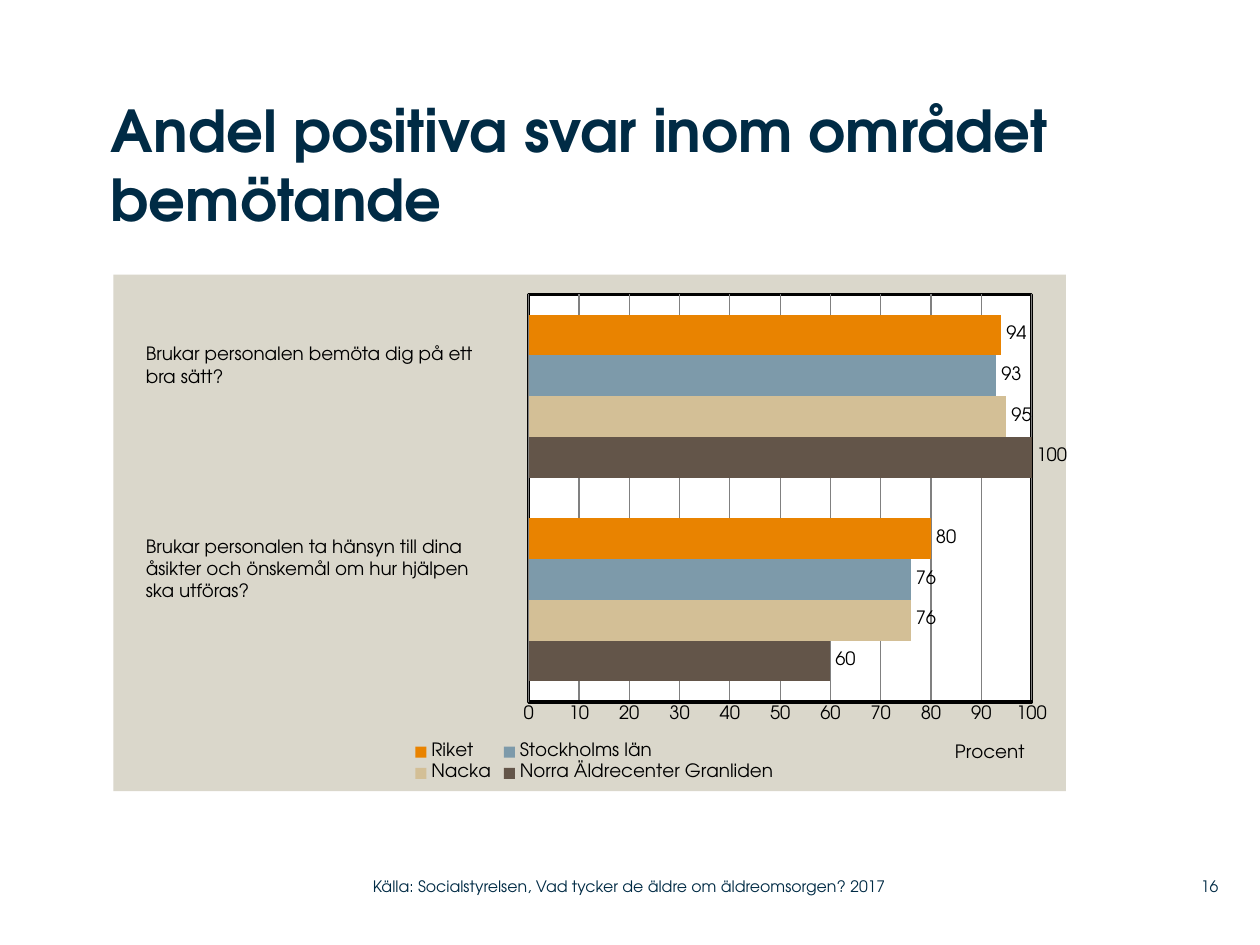
"""Build a slide with a bar chart of positive answers about how staff treat people."""
from dataclasses import dataclass

import lxml.etree
import pptx
import pptx.chart.axis
import pptx.chart.chart
import pptx.chart.data
import pptx.dml.color
import pptx.enum.chart
import pptx.enum.text
import pptx.oxml
import pptx.oxml.ns
import pptx.slide
import pptx.text.text
import pptx.util
from pptx.util import Inches

FONT = "TeX Gyre Adventor"
COLORS = {
    "navy": "002B45", "black": "000000", "panel": "DAD7CB", "white": "FFFFFF",
    "grid": "808080", "brown": "635549", "sand": "D3BF96", "blue": "7D9AAA",
    "orange": "E98300",
}


@dataclass
class Series:
    name: str
    values: tuple[int, int]
    color: str


@dataclass
class Label:
    lines: tuple[str, ...]
    left: float
    top: float
    width: float
    height: float
    size: float = 10.5
    color: str = "black"
    inset: float | None = None
    centered: bool = False
    align_right: bool = False


SERIES = (
    Series("Norra Äldrecenter Granliden", (60, 100), "brown"),
    Series("Nacka", (76, 95), "sand"),
    Series("Stockholms län", (76, 93), "blue"),
    Series("Riket", (80, 94), "orange"),
)
QUESTIONS = (
    Label(("Brukar personalen bemöta dig på ett", "bra sätt?"), 1.06, 2.67, 2.97, 0.45),
    Label(("Brukar personalen ta hänsyn till dina", "åsikter och önskemål om hur hjälpen",
           "ska utföras?"), 1.06, 4.2, 2.99, 0.63),
)
FOOTERS = (
    Label(("16",), 9.2, 6.89, 0.47, 0.29, 9, "navy", 0, True, True),
    Label(("Källa: Socialstyrelsen, Vad tycker de äldre om äldreomsorgen? 2017",),
          2.96, 6.89, 4.43, 0.29, 9, "navy", 0, True),
)


def rgb(name: str) -> pptx.dml.color.RGBColor:
    """Return the named colour."""
    return pptx.dml.color.RGBColor.from_string(COLORS[name])


def style_font(font: pptx.text.text.Font, size: float, color: str, bold: bool = False) -> None:
    """Set the face, size, colour and weight of a font."""
    font.name = FONT
    font.size = pptx.util.Pt(size)
    font.bold = bold
    font.color.rgb = rgb(color)


def set_insets(frame: pptx.text.text.TextFrame, inset: float) -> None:
    """Give a text frame the same margin on every side."""
    frame.margin_left = frame.margin_right = Inches(inset)
    frame.margin_top = frame.margin_bottom = Inches(inset)


def add_label(page: pptx.slide.Slide, label: Label) -> None:
    """Add a text box with one paragraph per line."""
    box = page.shapes.add_textbox(Inches(label.left), Inches(label.top),
                                  Inches(label.width), Inches(label.height))
    frame = box.text_frame
    frame.word_wrap = True
    if label.inset is not None:
        set_insets(frame, label.inset)
    if label.centered:
        frame.vertical_anchor = pptx.enum.text.MSO_ANCHOR.MIDDLE
    else:
        frame.auto_size = pptx.enum.text.MSO_AUTO_SIZE.SHAPE_TO_FIT_TEXT
    for index, line in enumerate(label.lines):
        para = frame.add_paragraph() if index else frame.paragraphs[0]
        if label.align_right:
            para.alignment = pptx.enum.text.PP_ALIGN.RIGHT
        span = para.add_run()
        span.text = line
        style_font(span.font, label.size, label.color)


def set_layout(parent: lxml.etree._Element, index: int, **fractions: float) -> None:
    """Place a chart part by fractions of the chart size."""
    for old in parent.findall(pptx.oxml.ns.qn("c:layout")):
        parent.remove(old)
    target = '<c:layoutTarget val="inner"/>' if parent.tag.endswith("plotArea") else ""
    modes = "".join(f'<c:{key}Mode val="edge"/>' for key in "xy")
    sizes = "".join(f'<c:{key} val="{value}"/>' for key, value in fractions.items())
    parent.insert(index, pptx.oxml.parse_xml(
        f'<c:layout {pptx.oxml.ns.nsdecls("c")}><c:manualLayout>'
        f"{target}{modes}{sizes}</c:manualLayout></c:layout>"))


def area_format(fill: str, line: str) -> lxml.etree._Element:
    """Return the fill and outline of a chart area."""
    return pptx.oxml.parse_xml(
        f'<c:spPr {pptx.oxml.ns.nsdecls("c", "a")}><a:solidFill>'
        f'<a:srgbClr val="{COLORS[fill]}"/></a:solidFill>{line}</c:spPr>')


def format_value_axis(axis: pptx.chart.axis.ValueAxis) -> None:
    """Set the percent scale, grid and title."""
    axis.minimum_scale, axis.maximum_scale, axis.major_unit = 0, 100, 10
    axis.major_tick_mark = pptx.enum.chart.XL_TICK_MARK.NONE
    axis.has_major_gridlines = True
    axis.major_gridlines.format.line.color.rgb = rgb("grid")
    axis.major_gridlines.format.line.width = pptx.util.Pt(0.75)
    axis.format.line.color.rgb = rgb("black")
    axis.format.line.width = pptx.util.Pt(2)
    style_font(axis.tick_labels.font, 10.5, "black")
    axis.has_title = True
    span = axis.axis_title.text_frame.paragraphs[0].add_run()
    span.text = "Procent"
    style_font(span.font, 10.5, "black")
    set_layout(axis.axis_title._element, 1, x=0.88, y=0.9)


def format_areas(chart: pptx.chart.chart.Chart) -> None:
    """Fill the panel and the framed plot, and place plot and legend."""
    space = chart._chartSpace
    body = space.find(pptx.oxml.ns.qn("c:chart"))
    body.addnext(area_format("panel", "<a:ln><a:noFill/></a:ln>"))
    plot_area = body.find(pptx.oxml.ns.qn("c:plotArea"))
    set_layout(plot_area, 0, x=0.436, y=0.038, w=0.528, h=0.789)
    plot_area.append(area_format(
        "white", f'<a:ln w="25400"><a:solidFill><a:srgbClr val="{COLORS["black"]}"/>'
        "</a:solidFill></a:ln>"))
    set_layout(chart.legend._element, 1, x=0.31, y=0.9, w=0.39, h=0.09)


def add_answer_chart(page: pptx.slide.Slide) -> None:
    """Add the clustered bars of positive answers."""
    data = pptx.chart.data.CategoryChartData()
    data.categories = ["1", "2"]
    for entry in SERIES:
        data.add_series(entry.name, entry.values)
    chart = page.shapes.add_chart(
        pptx.enum.chart.XL_CHART_TYPE.BAR_CLUSTERED,
        Inches(0.9), Inches(2.18), Inches(7.57), Inches(4.1), data).chart
    style_font(chart.font, 10.5, "black")
    chart.has_title = False
    chart.has_legend = True
    chart.legend.position = pptx.enum.chart.XL_LEGEND_POSITION.BOTTOM
    chart.legend.include_in_layout = False
    style_font(chart.legend.font, 10.5, "black")
    chart.category_axis.visible = False
    format_value_axis(chart.value_axis)
    plot = chart.plots[0]
    plot.gap_width, plot.overlap = 100, 0
    plot.vary_by_categories = False
    for entry, bars in zip(SERIES, plot.series):
        bars.format.fill.solid()
        bars.format.fill.fore_color.rgb = rgb(entry.color)
        labels = bars.data_labels
        labels.show_value = True
        labels.position = pptx.enum.chart.XL_LABEL_POSITION.OUTSIDE_END
        style_font(labels.font, 10.5, "black")
    format_areas(chart)


def set_title(page: pptx.slide.Slide) -> None:
    """Place and fill the title placeholder."""
    title = page.shapes.title
    title.left, title.top = Inches(0.88), Inches(0.75)
    title.width, title.height = Inches(7.6), Inches(1.42)
    frame = title.text_frame
    set_insets(frame, 0)
    frame.word_wrap = True
    frame.auto_size = pptx.enum.text.MSO_AUTO_SIZE.NONE
    frame.vertical_anchor = pptx.enum.text.MSO_ANCHOR.TOP
    para = frame.paragraphs[0]
    para.alignment = pptx.enum.text.PP_ALIGN.LEFT
    span = para.add_run()
    span.text = "Andel positiva svar inom området bemötande"
    style_font(span.font, 33, "navy", True)


def main() -> None:
    """Build and save the deck."""
    deck = pptx.Presentation()
    deck.slide_width, deck.slide_height = Inches(10), Inches(7.5)
    page = deck.slides.add_slide(deck.slide_layouts[5])
    add_answer_chart(page)
    set_title(page)
    for label in QUESTIONS + FOOTERS:
        add_label(page, label)
    deck.save("out.pptx")


if __name__ == "__main__":
    main()
